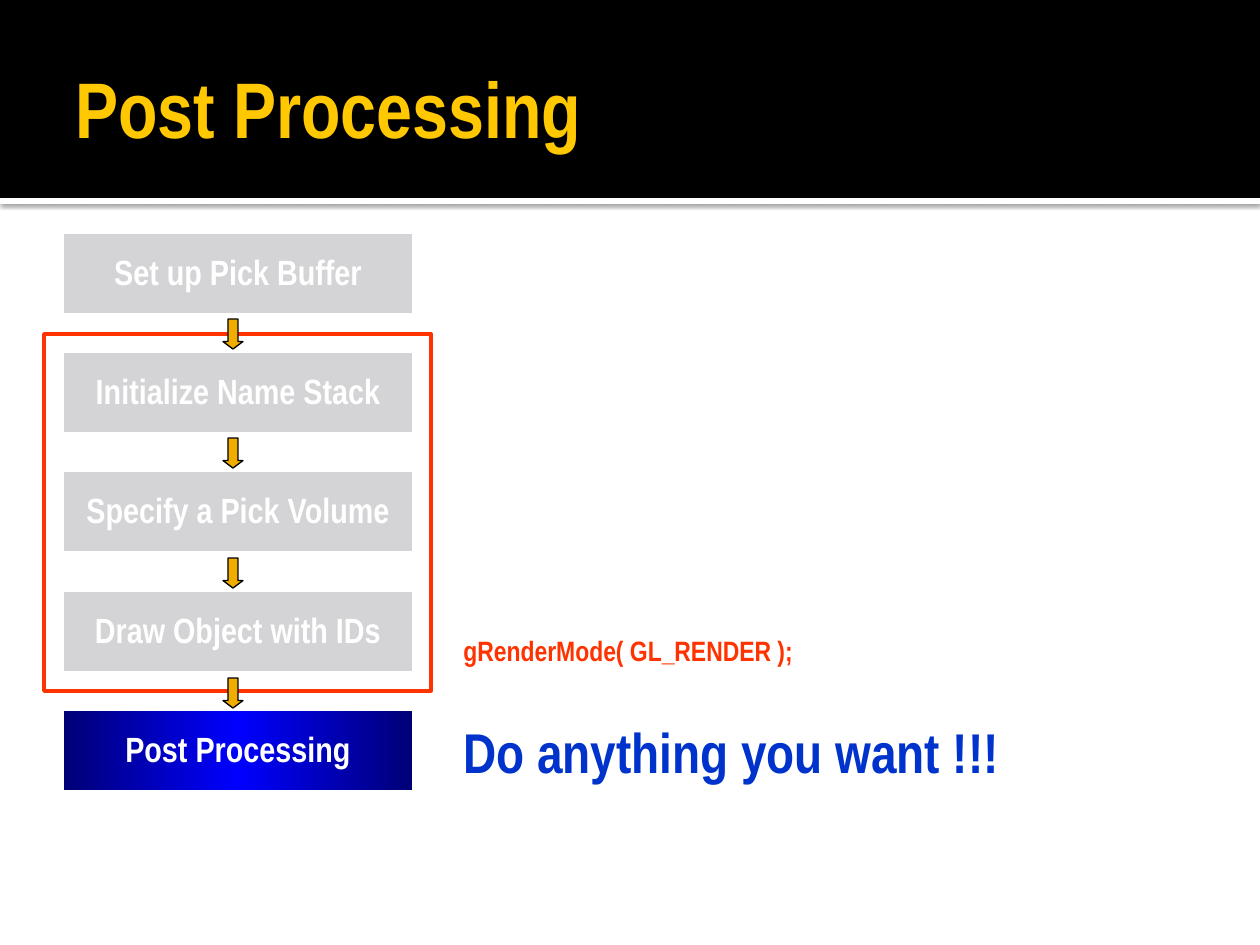
"""Build the Post Processing slide: a five-step picking flow with remarks beside it."""
import copy

import lxml.etree
import pptx
import pptx.dml.color
import pptx.enum.shapes
import pptx.enum.text
import pptx.oxml
import pptx.oxml.ns
import pptx.util

SCALE = 914400 / 126
SHAPES = pptx.enum.shapes.MSO_SHAPE
ANCHORS = pptx.enum.text.MSO_ANCHOR
ALIGNMENTS = pptx.enum.text.PP_ALIGN
color = pptx.dml.color.RGBColor.from_string

presentation = pptx.Presentation()
presentation.slide_width = round(1260 * SCALE)
presentation.slide_height = round(945 * SCALE)
slide = presentation.slides.add_slide(presentation.slide_layouts[6])


def add_block(kind, box, fill=None, line=None, line_width=1):
    shape = slide.shapes.add_shape(kind, *[round(length * SCALE) for length in box])
    shape.shadow.inherit = False
    if fill:
        shape.fill.solid()
        shape.fill.fore_color.rgb = color(fill)
    else:
        shape.fill.background()
    if line:
        shape.line.color.rgb = color(line)
        shape.line.width = pptx.util.Pt(line_width)
    else:
        shape.line.fill.background()
    return shape


def write_text(text, shape=None, box=None, size=20, ink="FFFFFF",
               anchor=ANCHORS.TOP, align=ALIGNMENTS.LEFT, spacing=1.0, right=0.1):
    if shape is None:
        shape = slide.shapes.add_textbox(*[round(length * SCALE) for length in box])
    frame = shape.text_frame
    frame.word_wrap = True
    frame.vertical_anchor = anchor
    frame.margin_right = pptx.util.Inches(right)
    paragraph = frame.paragraphs[0]
    paragraph.alignment = align
    paragraph.line_spacing = spacing
    run = paragraph.add_run()
    run.text = text
    run.font.name = "Arial Narrow"
    run.font.size = pptx.util.Pt(size)
    run.font.bold = True
    run.font.color.rgb = color(ink)


strip = add_block(SHAPES.RECTANGLE, (0, 198, 1260, 6), fill="FFFFFF")
effects = strip._element.spPr.find(pptx.oxml.ns.qn("a:effectLst"))
effects.append(pptx.oxml.parse_xml(
    f'<a:outerShdw {pptx.oxml.ns.nsdecls("a")} blurRad="31750" dist="10160" dir="5400000" '
    'algn="tl" rotWithShape="0"><a:srgbClr val="000000"><a:alpha val="60000"/></a:srgbClr>'
    '</a:outerShdw>'))
add_block(SHAPES.RECTANGLE, (0, 0, 1260, 198), fill="000000")
write_text("Post Processing", box=(63, 21, 1134, 173), size=45, ink="FFC800",
           anchor=ANCHORS.MIDDLE, right=0.05)

steps = ["Set up Pick Buffer", "Initialize Name Stack", "Specify a Pick Volume",
         "Draw Object with IDs", "Post Processing"]
for index, step in enumerate(steps):
    button = add_block(SHAPES.ACTION_BUTTON_CUSTOM,
                       (64, round(234 + 119.25 * index), 348, 79), fill="D4D4D6")
    write_text(step, shape=button, anchor=ANCHORS.MIDDLE, align=ALIGNMENTS.CENTER, spacing=0.95)

button.fill.gradient()
button.fill.gradient_angle = 0
first, last = button.fill.gradient_stops
first.color.rgb = last.color.rgb = color("000076")
first.position, last.position = 0, 1
stops = button._element.spPr.find(".//" + pptx.oxml.ns.qn("a:gsLst"))
stops.insert(1, copy.deepcopy(stops[0]))
middle = button.fill.gradient_stops[1]
middle.position = 0.5
middle.color.rgb = color("0000FF")

add_block(SHAPES.RECTANGLE, (44, 334, 387, 357), line="FF3300", line_width=2)
for index in range(len(steps) - 1):
    arrow = add_block(SHAPES.DOWN_ARROW, (223, round(319 + 119.5 * index), 20, 30),
                      fill="F0AD00", line="000000", line_width=0.75)
    arrow.adjustments[1] = 0.37

write_text("gRenderMode( GL_RENDER );", box=(451, 627, 358, 47), size=16, ink="FF3300")
write_text("Do anything you want !!!", box=(451, 711, 753, 79), size=32, ink="0033CC")

presentation.save("out.pptx")
